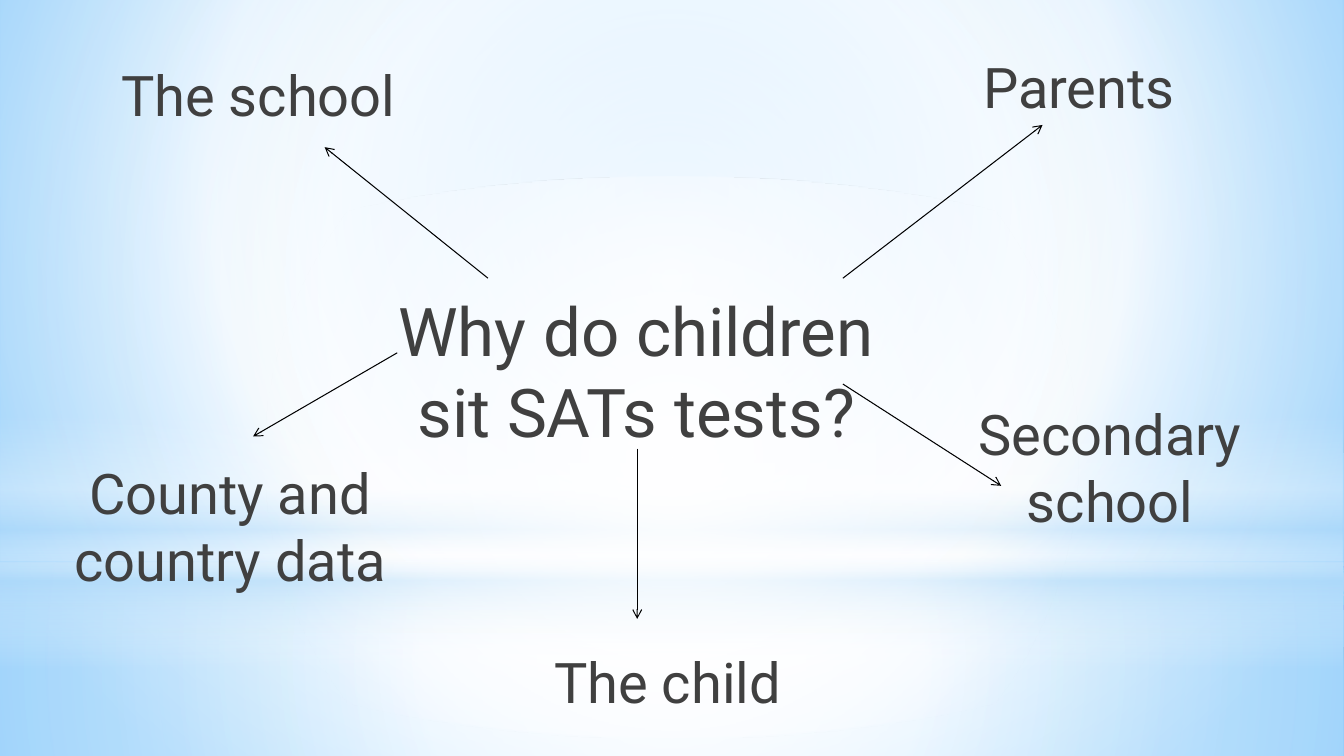
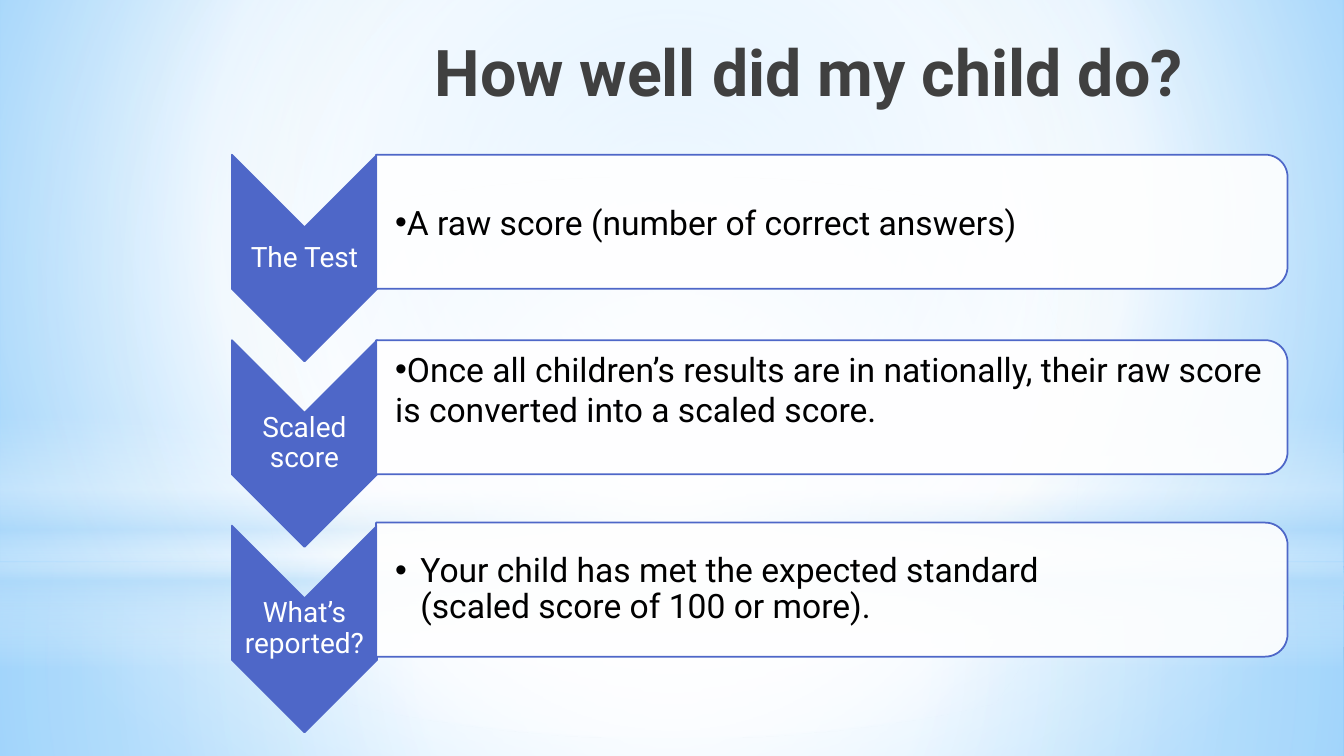
from lxml.etree import SubElement
from pptx import Presentation
from pptx.dml.color import RGBColor
from pptx.enum.shapes import MSO_CONNECTOR, MSO_SHAPE as SHAPE
from pptx.enum.text import MSO_ANCHOR as ANCHOR, MSO_AUTO_SIZE as FIT, PP_ALIGN as ALIGN
from pptx.oxml.ns import qn
from pptx.util import Inches, Pt

FONT = "Roboto"
HUE = {"text": "404040", "black": "000000", "white": "FFFFFF", "bar": "4E67C8",
       "pale": "B4DCFA", "sky": "9ED5FF", "deep": "5BB9FF"}
SIZE = (13.33, 7.5)
MID = (50, 50, 50, 50)

# Stops are (position %, colour, opacity %); focus None means top to bottom.
SKY = [(0, "sky", 100), (60, "white", 100), (100, "deep", 100)]
GLOWS = [
    (SHAPE.RECTANGLE, 5.58, 1.92, MID,
     [(0, "white", 91), (37, "white", 76), (100, "pale", 79)]),
    (SHAPE.RECTANGLE, 0, 5.58, MID,
     [(0, "white", 89), (48, "white", 62), (100, "pale", 79)]),
    (SHAPE.RECTANGLE, 4.12, 2.5, None,
     [(0, "white", 0), (29, "white", 30), (45, "pale", 40),
      (55, "white", 26), (65, "pale", 60), (100, "white", 0)]),
    (SHAPE.OVAL, 1.75, 5.58, MID, [(0, "white", 100), (56, "white", 0)]),
]

ASK = "Why do children sit SATs tests?"
# Reader, left and top of its text, start and end of its arrow
READERS = [
    ("County and country data", (0.23, 4.5), (3.94, 3.5), (2.51, 4.33)),
    ("The school", (0.51, 0.55), (4.84, 2.76), (3.22, 1.46)),
    ("Parents", (8.65, 0.47), (8.36, 2.76), (10.34, 1.24)),
    ("The child", (4.57, 6.37), (6.32, 4.45), (6.32, 6.14)),
    ("Secondary school", (8.96, 3.91), (8.36, 3.81), (9.93, 4.82)),
]

HEAD = "How well did my child do?"
# Label, text, format of the text, rise of the bar
STEPS = [
    ("The Test", "A raw score (number of correct answers)", {}, 0),
    ("Scaled score", "Once all children’s results are in nationally, their raw score "
     "is converted into a scaled score.", {"inset": (0.19, 0.02, 0.02, 0.38)}, 0),
    ("What’s reported?", "Your child has met the expected standard\v"
     "(scaled score of 100 or more).", {"hang": 0.25, "lead": 0.9}, 0.03),
]
PITCH = 1.84


def rgb(name):
    return RGBColor.from_string(HUE[name])


def blend(owner, fill, stops, focus):
    """Give the fill of owner a gradient, round the focus or downwards."""
    fill.gradient()
    grad = owner.element.find(".//" + qn("a:gradFill"))
    for part in list(grad):
        grad.remove(part)
    row = SubElement(grad, qn("a:gsLst"))
    for pos, name, alpha in stops:
        stop = SubElement(row, qn("a:gs"), pos=str(pos * 1000))
        tint = SubElement(stop, qn("a:srgbClr"), val=HUE[name])
        SubElement(tint, qn("a:alpha"), val=str(alpha * 1000))
    if focus:
        ring = SubElement(grad, qn("a:path"), attrib={"path": "circle"})
        SubElement(ring, qn("a:fillToRect"),
                   attrib={side: str(n * 1000) for side, n in zip("ltrb", focus)})
    else:
        SubElement(grad, qn("a:lin"), ang="5400000", scaled="0")


def place(shape, left, top, width, height):
    shape.left, shape.top = Inches(left), Inches(top)
    shape.width, shape.height = Inches(width), Inches(height)


def write(shape, text, size, color="text", bold=False, align=ALIGN.CENTER,
          anchor=ANCHOR.TOP, inset=(0.1, 0.05, 0.1, 0.05), lead=1.0, before=0,
          hang=None):
    """Fill a shape with one paragraph; hang adds a bullet with that indent."""
    frame = shape.text_frame
    frame.word_wrap, frame.auto_size = True, FIT.NONE
    frame.vertical_anchor = anchor
    (frame.margin_left, frame.margin_top,
     frame.margin_right, frame.margin_bottom) = map(Inches, inset)
    para = frame.paragraphs[0]
    para.text = text
    para.alignment, para.line_spacing = align, lead
    para.space_before = Pt(before)
    for run in para.runs:
        font = run.font
        font.name, font.size, font.bold = FONT, Pt(size), bold
        font.color.rgb = rgb(color)
    if hang is not None:
        props = para._p.get_or_add_pPr()
        props.set("marL", str(Inches(hang)))
        props.set("indent", str(-Inches(hang)))
        SubElement(props, qn("a:buFont"), typeface="Arial")
        SubElement(props, qn("a:buChar"), char="•")


def label(slide, box, text, **style):
    write(slide.shapes.add_textbox(*map(Inches, box)), text, **style)


def block(slide, kind, x, y, width, height, color, alpha=100):
    """Add a shape centred on x, y and turned a quarter to the right."""
    shape = slide.shapes.add_shape(
        kind, *map(Inches, (x - width / 2, y - height / 2, width, height)))
    shape.rotation = 90
    shape.shadow.inherit = False
    shape.fill.solid()
    shape.fill.fore_color.rgb = rgb(color)
    tint = shape.element.spPr.find(qn("a:solidFill"))[0]
    SubElement(tint, qn("a:alpha"), val=str(alpha * 1000))
    shape.line.color.rgb = rgb("bar")
    shape.line.width = Pt(1.25)


def arrow(slide, start, end):
    line = slide.shapes.add_connector(
        MSO_CONNECTOR.STRAIGHT, *map(Inches, start + end))
    line.line.color.rgb = rgb("black")
    line.line.width = Pt(0.75)
    SubElement(line.line._get_or_add_ln(), qn("a:tailEnd"), type="arrow")
    SubElement(line.element.spPr, qn("a:effectLst"))


def backdrop(deck, slide):
    """Build the glows on a slide, then move them to the master."""
    master = deck.slide_master
    blend(master, master.background.fill, SKY, (20, 10, 20, 60))
    for i, (kind, top, height, focus, stops) in enumerate(GLOWS):
        glow = slide.shapes.add_shape(
            kind, *map(Inches, (0, top, SIZE[0], height)))
        glow.shadow.inherit = False
        glow.line.fill.background()
        blend(glow, glow.fill, stops, focus)
        glow.element.nvSpPr.cNvPr.set("id", str(20 + i))
        master.shapes.element.insert(2 + i, glow.element)


def reasons(slide):
    style = {"inset": (0.15, 0.05, 0.1, 0.05), "before": 3}
    title = slide.shapes.title
    place(title, 3.53, 2.82, 5.51, 1.82)
    write(title, ASK, size=48, **style)
    for name, spot, start, end in READERS:
        label(slide, spot + (4.05, 1.82), name, size=40, **style)
        arrow(slide, start, end)


def results(slide):
    title = slide.shapes.title
    place(title, 2.08, 0.28, 9.75, 0.84)
    write(title, HEAD, size=46, bold=True, align=ALIGN.RIGHT, anchor=ANCHOR.MIDDLE)
    for i, (name, text, extra, rise) in enumerate(STEPS):
        y = 2.56 + i * PITCH
        mid = y - 0.36 - rise
        block(slide, SHAPE.CHEVRON, 3.02, y, 2.05, 1.44, "bar")
        label(slide, (2.3, y - 0.31, 1.44, 0.62), name, size=20, color="white",
              anchor=ANCHOR.MIDDLE, inset=(0.01,) * 4, lead=0.9)
        block(slide, SHAPE.ROUND_2_SAME_RECTANGLE, 8.25, mid, 1.33, 9.04, "white", 90)
        style = {"inset": (0.19, 0.02, 0.02, 0.02), "hang": 0} | extra
        label(slide, (3.73, mid - 0.6, 8.97, 1.2), text, size=24, color="black",
              align=ALIGN.LEFT, anchor=ANCHOR.MIDDLE, **style)


def main():
    deck = Presentation()
    deck.slide_width, deck.slide_height = map(Inches, SIZE)
    first, second = (deck.slides.add_slide(deck.slide_layouts[5]) for _ in range(2))
    backdrop(deck, first)
    reasons(first)
    results(second)
    deck.save("out.pptx")


if __name__ == "__main__":
    main()
